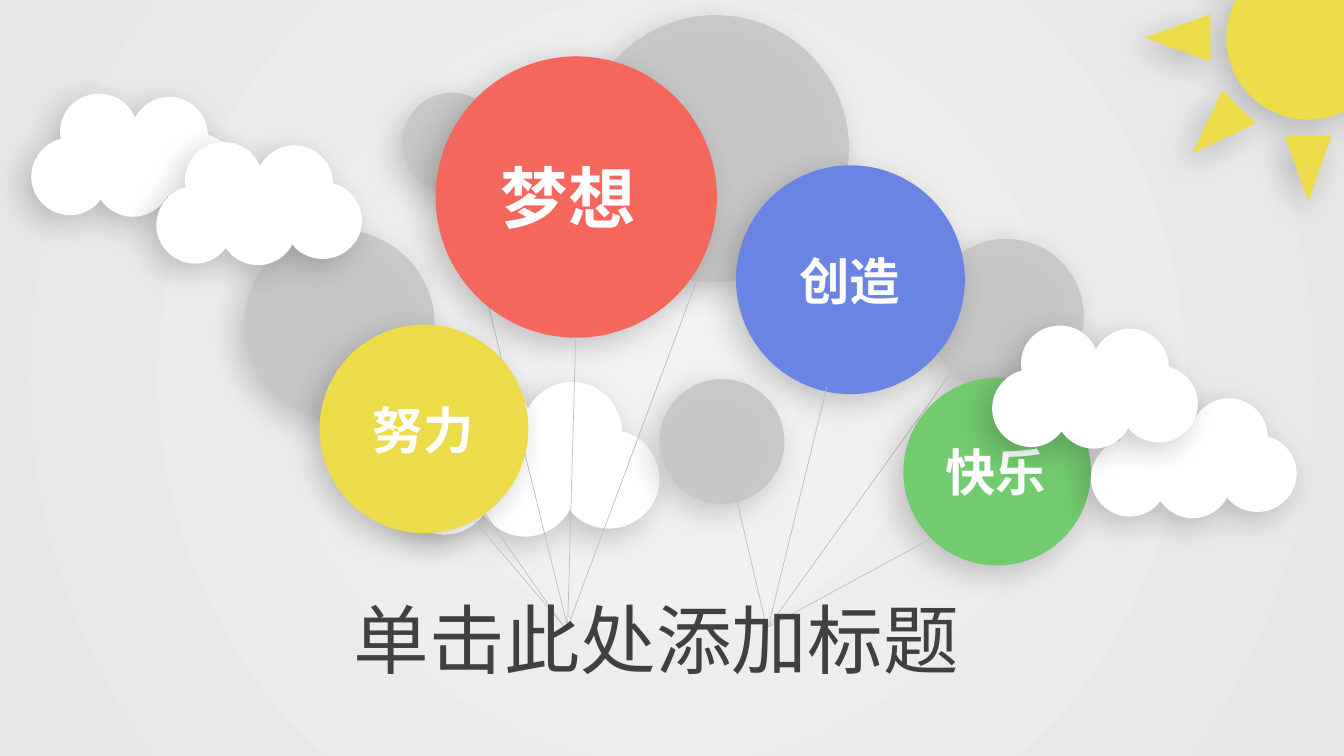
from lxml.etree import SubElement
from pptx import Presentation
from pptx.dml.color import RGBColor
from pptx.enum.shapes import MSO_CONNECTOR, MSO_SHAPE
from pptx.enum.text import MSO_AUTO_SIZE
from pptx.oxml import parse_xml
from pptx.oxml.ns import nsdecls, qn
from pptx.util import Inches, Pt

FONT = "Noto Sans CJK SC"
WHITE, GREY, YELLOW = "FFFFFF", "C7C7C7", "ECDC49"

deck = Presentation()
deck.slide_width, deck.slide_height = Inches(13.33), Inches(7.5)
page = deck.slides.add_slide(deck.slide_layouts[6])
shapes = page.shapes

page.element.cSld.insert(0, parse_xml(
    f'<p:bg {nsdecls("p", "a")}><p:bgPr><a:gradFill><a:gsLst>'
    '<a:gs pos="0"><a:srgbClr val="F2F2F2"/></a:gs>'
    '<a:gs pos="100000"><a:srgbClr val="E6E6E6"/></a:gs></a:gsLst>'
    '<a:path path="circle"><a:fillToRect l="50000" t="50000" r="50000" b="50000"/></a:path>'
    '</a:gradFill><a:effectLst/></p:bgPr></p:bg>'))


def paint(shape, color):
    """Give a cut-paper look: flat fill, no outline, soft shadow; greys are slightly transparent."""
    shape.fill.solid()
    shape.fill.fore_color.rgb = RGBColor.from_string(color)
    shape.line.fill.background()
    properties = shape._element.spPr
    if color == GREY:
        fill_color = properties.find(qn("a:solidFill")).find(qn("a:srgbClr"))
        SubElement(fill_color, qn("a:alpha"), val="90000")
    properties.append(parse_xml(
        f'<a:effectLst {nsdecls("a")}><a:outerShdw blurRad="{Pt(22)}" dist="{Pt(8)}" '
        'dir="8100000" algn="tr" rotWithShape="0"><a:srgbClr val="000000">'
        '<a:alpha val="20000"/></a:srgbClr></a:outerShdw></a:effectLst>'))


def add_text(text, left, top, width, height, size=36, color=WHITE, bold=True, wrap=False):
    box = shapes.add_textbox(Inches(left), Inches(top), Inches(width), Inches(height))
    box.text_frame.word_wrap = wrap
    box.text_frame.auto_size = MSO_AUTO_SIZE.SHAPE_TO_FIT_TEXT
    span = box.text_frame.paragraphs[0].add_run()
    span.text = text
    span.font.size = Pt(size)
    span.font.bold = bold
    span.font.color.rgb = RGBColor.from_string(color)
    span.font.name = FONT
    SubElement(span.font._element, qn("a:ea"), typeface=FONT)


# Cloud outline, clockwise: pairs are line ends, sixes are Bézier curves
cloud_start = (0.87, 0)
cloud_outline = [
    (1.08, 0, 1.25, 0.12, 1.33, 0.3), (1.33, 0.31), (1.36, 0.26),
    (1.45, 0.13, 1.6, 0.04, 1.77, 0.04), (2.01, 0.04, 2.21, 0.21, 2.26, 0.44),
    (2.27, 0.53), (2.33, 0.55),
    (2.51, 0.62, 2.64, 0.8, 2.64, 1.01), (2.64, 1.28, 2.41, 1.5, 2.14, 1.5),
    (1.99, 1.5, 1.85, 1.44, 1.76, 1.33), (1.75, 1.31), (1.72, 1.36),
    (1.63, 1.49, 1.48, 1.58, 1.3, 1.58), (1.17, 1.58, 1.04, 1.52, 0.95, 1.43),
    (0.89, 1.36), (0.85, 1.41),
    (0.76, 1.5, 0.64, 1.56, 0.5, 1.56), (0.23, 1.56, 0, 1.34, 0, 1.06),
    (0, 0.86, 0.13, 0.68, 0.31, 0.6), (0.38, 0.58), (0.37, 0.49),
    (0.37, 0.22, 0.59, 0, 0.87, 0),
]
cloud_width = 2.64
cloud_corners = [cloud_start] + [segment[-2:] for segment in cloud_outline]

back_cloud = (3.91, 3.75, 2.63)
front_clouds = [(0.31, 0.93, 2.04), (1.55, 1.41, 2.04), (10.82, 3.92, 2.04), (9.84, 3.23, 2.04)]

# Balloon left, top, diameter, colour; string start; string end
left_knot, right_knot = (5.63, 6.22), (7.62, 6.22)
balloons = [
    (5.77, 0.15, 2.65, GREY, (6.9, 2.81), left_knot),
    (9.21, 2.37, 1.54, GREY, (9.44, 3.69), right_knot),
    (3.99, 0.92, 0.99, GREY, (4.57, 1.92), left_knot),
    (2.42, 2.28, 1.89, GREY, (3.99, 3.92), (5.6, 6.23)),
    (3.17, 3.22, 2.07, YELLOW, (4.71, 5.17), (5.6, 6.22)),
    (4.32, 0.56, 2.79, "F5675D", (5.71, 3.35), left_knot),
    (6.54, 3.76, 1.24, GREY, (7.31, 4.97), (7.6, 6.21)),
    (7.3, 1.64, 2.27, "6A84E3", (8.2, 3.84), right_knot),
    (8.96, 3.75, 1.86, "72CB6F", (9.24, 5.34), right_knot),
]

for left, top, width in [back_cloud, *front_clouds]:
    ratio = width / cloud_width
    corners = [(Inches(left + x * ratio), Inches(top + y * ratio)) for x, y in cloud_corners]
    builder = shapes.build_freeform(*corners[0])
    builder.add_line_segments(corners[1:], close=True)
    cloud = builder.convert_to_shape()
    paint(cloud, WHITE)

    # Bend the straight sides that belong to curves
    sides = list(cloud._element.iter(qn("a:lnTo")))
    for side, segment in zip(sides, cloud_outline):
        if len(segment) == 6:
            side.clear()
            side.tag = qn("a:cubicBezTo")
            for x, y in zip(segment[::2], segment[1::2]):
                SubElement(side, qn("a:pt"), x=str(Inches(x * ratio)), y=str(Inches(y * ratio)))

    # Balloons and labels lie between the back cloud and the front ones
    if (left, top, width) != back_cloud:
        continue
    for x, y, diameter, color, start, end in balloons:
        balloon = shapes.add_shape(MSO_SHAPE.OVAL, Inches(x), Inches(y),
                                   Inches(diameter), Inches(diameter))
        paint(balloon, color)
        string = shapes.add_connector(MSO_CONNECTOR.STRAIGHT,
                                      *(Inches(value) for value in start + end))
        string.line.color.rgb = RGBColor.from_string("BFBFBF")
        string.line.width = Pt(0.5)
        SubElement(string._element.spPr, qn("a:effectLst"))
    add_text("梦想", 4.87, 1.5, 1.68, 0.9, size=48, wrap=True)
    add_text("努力", 3.6, 3.91, 1.2, 0.7)
    add_text("创造", 7.83, 2.43, 1.2, 0.7)
    add_text("快乐", 9.28, 4.33, 1.23, 0.7, wrap=True)

sun = shapes.add_shape(MSO_SHAPE.SUN, Inches(11.35), Inches(-1.25), Inches(3.25), Inches(3.25))
paint(sun, YELLOW)
add_text("单击此处添加标题", 3.41, 5.83, 6.51, 1, size=54, color="404040", bold=False, wrap=True)

deck.save("out.pptx")
